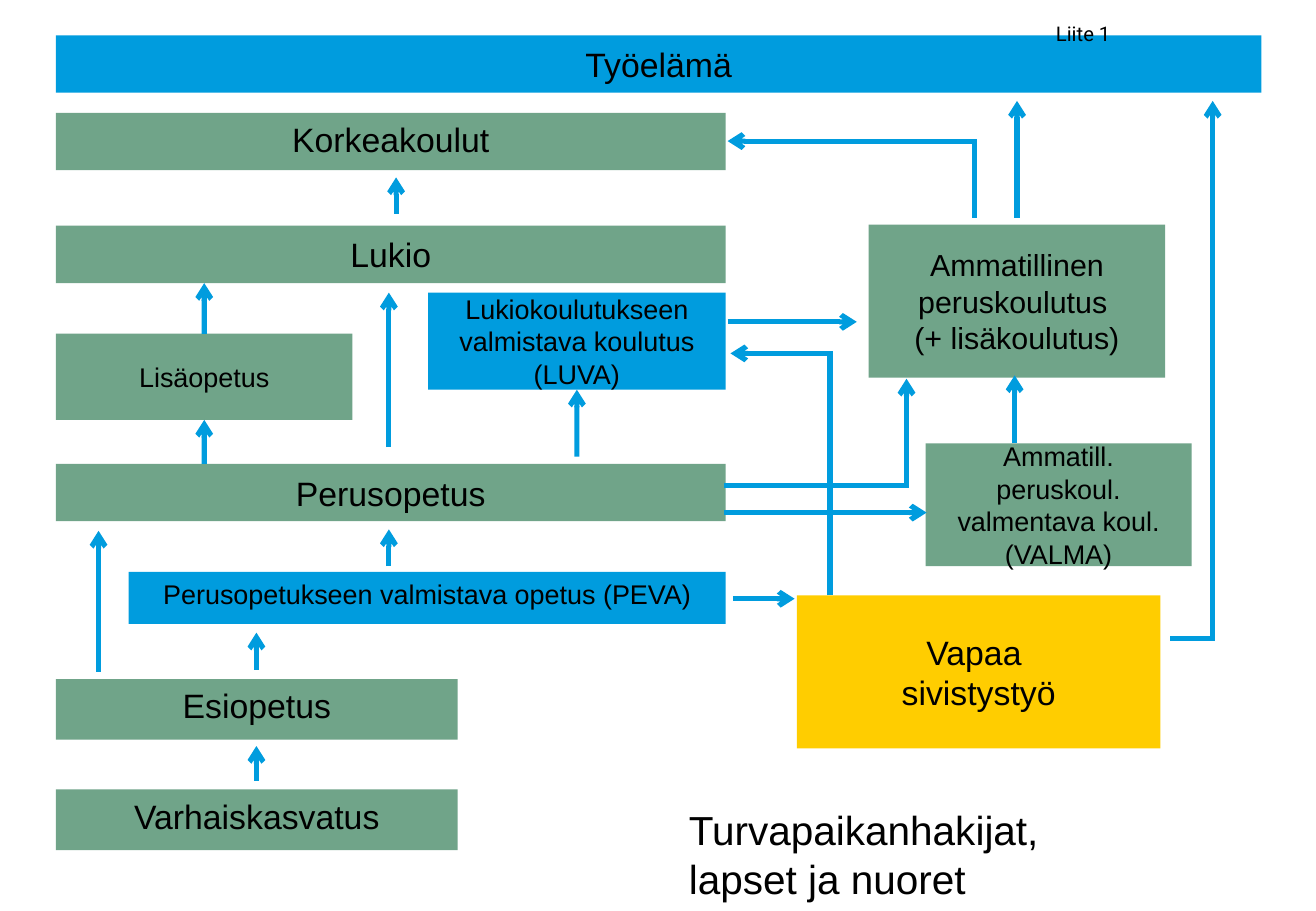
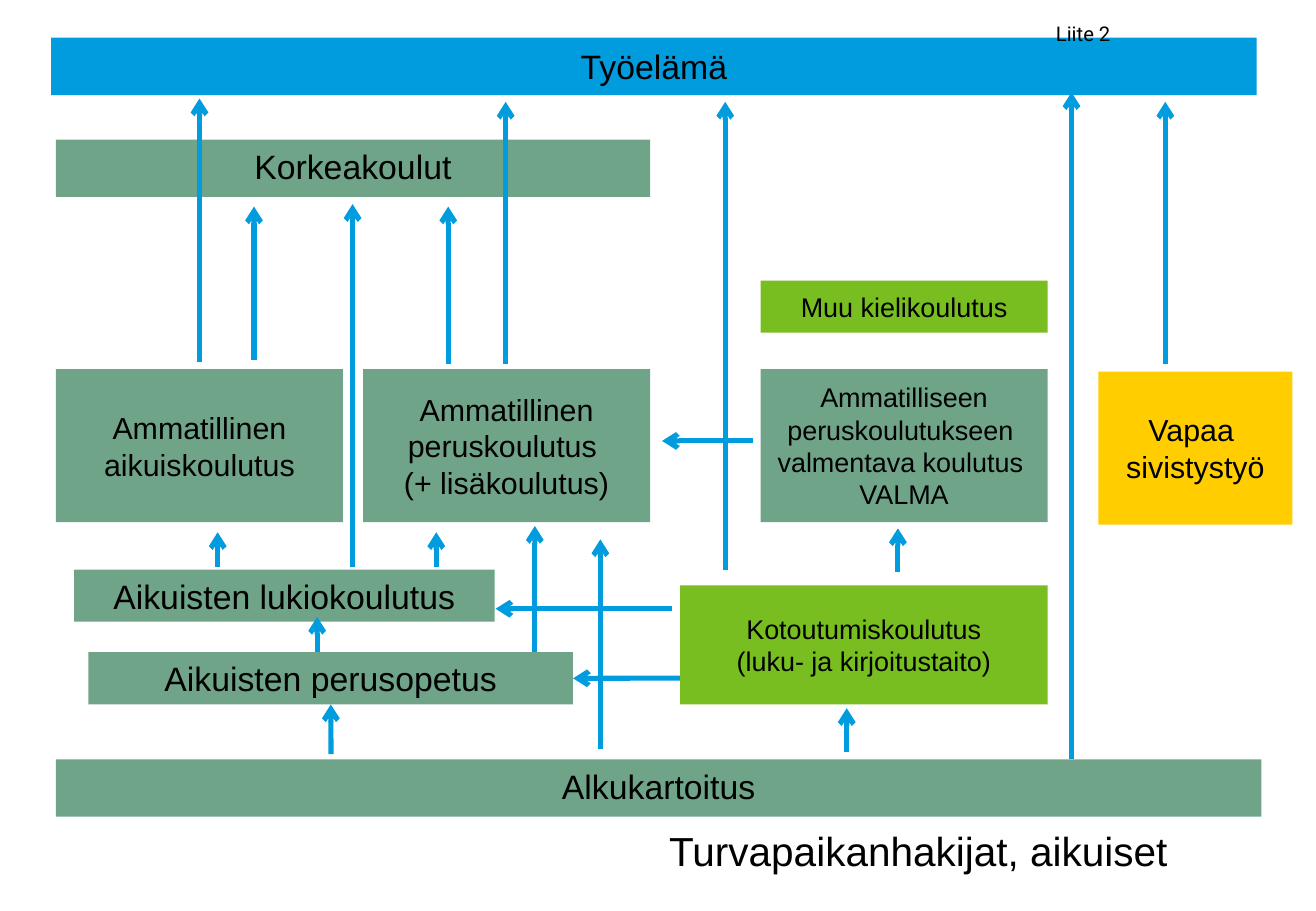
from dataclasses import dataclass
from itertools import pairwise

from lxml.etree import SubElement
from pptx import Presentation
from pptx.dml.color import RGBColor
from pptx.enum.shapes import MSO_CONNECTOR, MSO_SHAPE
from pptx.enum.text import MSO_ANCHOR, MSO_AUTO_SIZE, PP_ALIGN
from pptx.oxml.ns import qn
from pptx.util import Cm, Pt


@dataclass(frozen=True)
class Theme:
    blue: str = "009CDE"
    green: str = "70A489"
    lime: str = "78BE20"
    yellow: str = "FFCD00"
    black: str = "000000"
    font: str = "Arial"
    label_font: str = "Roboto"
    caption: int = 24
    large: int = 20
    medium: int = 18
    small: int = 16
    label: int = 12
    line: int = 3


T = Theme()
TOP, LEFT, BOTTOM, RIGHT = range(4)
MID, UPPER = MSO_ANCHOR.MIDDLE, MSO_ANCHOR.TOP
BAND_W, ROW_H, BASE_H, SMALL_H, BLOCK_H = 25.2, 1.2, 1.27, 1.09, 3.2
HALF_LINE = 0.05  # half the line width in cm, squares off corners


def write(tf, text, size, font=T.font, align=PP_ALIGN.CENTER, anchor=UPPER):
    """Newlines part paragraphs; vertical tabs part lines."""
    tf.word_wrap = True
    tf.vertical_anchor = anchor
    for i, para in enumerate(text.split("\n")):
        p = tf.add_paragraph() if i else tf.paragraphs[0]
        p.alignment = align
        for j, line in enumerate(para.split("\v")):
            if j:
                p.add_line_break()
            r = p.add_run()
            r.text = line
            r.font.name, r.font.size = font, Pt(size)
            r.font.color.rgb = RGBColor.from_string(T.black)


@dataclass
class Region:
    """Part of a slide; lengths in cm count from its left top corner."""
    s: object
    x: float
    y: float

    def at(self, x, y):
        return Cm(self.x + x), Cm(self.y + y)

    def box(self, text, x, y, w, h, fill=T.green, size=T.large, anchor=MID):
        sp = self.s.shapes.add_shape(MSO_SHAPE.RECTANGLE, *self.at(x, y), Cm(w), Cm(h))
        sp.shadow.inherit = False
        sp.fill.solid()
        sp.fill.fore_color.rgb = RGBColor.from_string(fill)
        sp.line.fill.background()
        write(sp.text_frame, text, size, anchor=anchor)
        return sp

    def line(self, shapes, start, end, head):
        c = shapes.add_connector(MSO_CONNECTOR.STRAIGHT, *self.at(*start), *self.at(*end))
        c.line.color.rgb = RGBColor.from_string(T.blue)
        c.line.width = Pt(T.line)
        if head:
            SubElement(c.line._get_or_add_ln(), qn("a:tailEnd"), type="arrow")
        SubElement(c._element.spPr, qn("a:effectLst"))
        return c

    def arrow(self, *points):
        return self.line(self.s.shapes, *points, head=True)

    def up(self, x, start, end):
        return self.arrow((x, start), (x, end))

    def route(self, *points):
        """Grouped line with corners and a head at its last point."""
        shapes = self.s.shapes.add_group_shape().shapes
        for start, end in pairwise(points):
            last = end == points[-1]
            if not last:
                end = tuple(b + HALF_LINE * ((b > a) - (b < a))
                            for a, b in zip(start, end))
            self.line(shapes, start, end, last)


# Parts both slides share

def work_band(s, x, y):
    Region(s, x, y).box("Työelämä", 0, 0, BAND_W, ROW_H, T.blue)


def caption(s, x, y, text, h):
    tf = s.shapes.add_textbox(Cm(x), Cm(y), Cm(11.6), Cm(h)).text_frame
    write(tf, text, T.caption, align=PP_ALIGN.LEFT)
    tf.auto_size = MSO_AUTO_SIZE.SHAPE_TO_FIT_TEXT


def appendix_label(s, text):
    tb = s.shapes.add_textbox(Cm(18.16), Cm(0.33), Cm(8.97), Cm(1.27))
    write(tb.text_frame, text, T.label, T.label_font)


# Children and young people

def school_ladder(s, x, y):
    g = Region(s, x, y)
    width, base_w = 14, 8.4
    g.box("Korkeakoulut", 0, 0, width, ROW_H, anchor=UPPER)
    g.box("Lukio", 0, 2.36, width, ROW_H)
    luva = g.box("Lukiokoulutukseen valmistava koulutus (LUVA)",
                 7.78, 3.76, 6.22, 2.03, T.blue, T.small)
    extra = g.box("Lisäopetus", 0, 4.62, 6.2, 1.8, size=T.small)
    g.box("Perusopetus", 0, 7.34, width, ROW_H)
    g.box("Perusopetukseen valmistava opetus (PEVA)", 1.52, 9.6,
          width - 1.52, SMALL_H, T.blue, T.small, UPPER)
    g.box("Esiopetus", 0, 11.84, base_w, BASE_H, anchor=UPPER)
    g.box("Varhaiskasvatus", 0, 14.15, base_w, BASE_H, anchor=UPPER)

    for ax, start, end in [(4.19, 13.97, 13.24), (4.19, 11.64, 10.87),
                           (0.89, 11.69, 8.74), (6.96, 9.48, 8.71),
                           (6.96, 6.99, 3.76), (7.11, 2.11, 1.35)]:
        g.up(ax, start, end)
    g.up(3.1, 7.34, 6.42).end_connect(extra, BOTTOM)
    g.up(3.1, 4.62, 3.56).begin_connect(extra, TOP)
    g.up(10.89, 7.19, 5.79).end_connect(luva, BOTTOM)


def vocational_paths(s, x, y):
    g = Region(s, x, y)
    g.box("Ammatillinen peruskoulutus \n(+ lisäkoulutus)",
          3.02, 2.59, 6.2, BLOCK_H, size=T.medium)
    g.box("Ammatill. peruskoul.\nvalmentava koul. (VALMA)",
          4.21, 7.16, 5.56, 2.57, size=T.small)
    g.box("Vapaa \nsivistystyö", 1.52, 10.34, 7.6, BLOCK_H, T.yellow)

    g.arrow((0.07, 4.62), (2.77, 4.62))
    g.arrow((0.18, 10.41), (1.47, 10.41))
    g.arrow((0, 8.61), (4.23, 8.61))
    g.up(6.12, 2.44, 0)
    g.up(6.07, 7.16, 5.74)
    g.route((9.32, 11.25), (10.21, 11.25), (10.21, 0))
    g.route((0, 8.05), (3.81, 8.05), (3.81, 5.81))
    g.route((2.21, 10.34), (2.21, 5.28), (0.13, 5.28))
    g.route((5.23, 2.44), (5.23, 0.84), (0.07, 0.84))


# Adults

def adult_education(s, x, y):
    g = Region(s, x, y)
    width, block_w = 12.42, 6
    g.box("Korkeakoulut", 0, 0.86, width, ROW_H, anchor=UPPER)
    for text, bx in [("Ammatillinen aikuiskoulutus", 0),
                     ("Ammatillinen peruskoulutus \n(+ lisäkoulutus)", width - block_w)]:
        g.box(text, bx, 5.66, block_w, BLOCK_H, size=T.medium)
    g.box("Aikuisten lukiokoulutus", 0.38, 9.85, 8.79, SMALL_H, anchor=UPPER)
    basic = g.box("Aikuisten perusopetus", 0.68, 11.58, 10.13, SMALL_H, anchor=UPPER)

    for ax, start, end in [(3, 5.51, 0), (4.14, 5.46, 2.26), (8.2, 5.56, 2.26),
                           (9.4, 5.56, 0.07), (6.2, 9.8, 2.21),
                           (3.38, 9.8, 9.07), (7.95, 9.8, 9.07),
                           (5.46, 11.58, 10.84), (10.01, 11.58, 8.94),
                           (11.38, 13.61, 9.22)]:
        g.up(ax, start, end)
    g.up(5.75, 13.71, 12.67).end_connect(basic, BOTTOM)
    g.arrow((13.05, 12.12), (10.81, 12.12)).end_connect(basic, RIGHT)
    g.arrow((12.88, 10.67), (9.19, 10.67))


def integration_paths(s, x, y):
    g = Region(s, x, y)
    width, block_w = 7.68, 6
    inner = width - block_w
    g.box("Muu kielikoulutus", inner, 3.94, block_w, SMALL_H, T.lime, T.small)
    g.box("Ammatilliseen peruskoulutukseen \nvalmentava koulutus \vVALMA",
          inner, 5.79, block_w, BLOCK_H, size=T.small)
    g.box("Kotoutumiskoulutus\n(luku- ja kirjoitustaito)",
          0, 10.31, width, 2.49, T.lime, T.small)
    g.box("Vapaa \nsivistystyö", 8.74, 5.84, 4.06, BLOCK_H, T.yellow, T.medium)

    for ax, start, end in [(3.48, 13.79, 12.88), (0.94, 9.98, 0.2),
                           (4.55, 10.03, 9.12), (10.14, 5.69, 0.2),
                           (8.18, 13.95, 0)]:
        g.up(ax, start, end)
    g.arrow((1.53, 7.29), (-0.38, 7.29))


def assessment_band(s, x, y):
    Region(s, x, y).box("Alkukartoitus", 0, 0, BAND_W, ROW_H, anchor=UPPER)


def young_slide(s):
    work_band(s, 1.17, 0.74)
    school_ladder(s, 1.17, 2.36)
    vocational_paths(s, 15.14, 2.11)
    caption(s, 14.15, 16.71, "Turvapaikanhakijat, \vlapset ja nuoret", 2.31)
    appendix_label(s, "Liite 1")


def adult_slide(s):
    work_band(s, 1.07, 0.79)
    assessment_band(s, 1.17, 15.88)
    adult_education(s, 1.17, 2.06)
    integration_paths(s, 14.22, 1.93)
    caption(s, 13.74, 17.15, "Turvapaikanhakijat, aikuiset", 1.27)
    appendix_label(s, "Liite 2")


def main():
    prs = Presentation()
    prs.slide_width, prs.slide_height = Cm(27.51), Cm(19.05)
    for build in (young_slide, adult_slide):
        build(prs.slides.add_slide(prs.slide_layouts[6]))
    prs.save("out.pptx")


if __name__ == "__main__":
    main()
